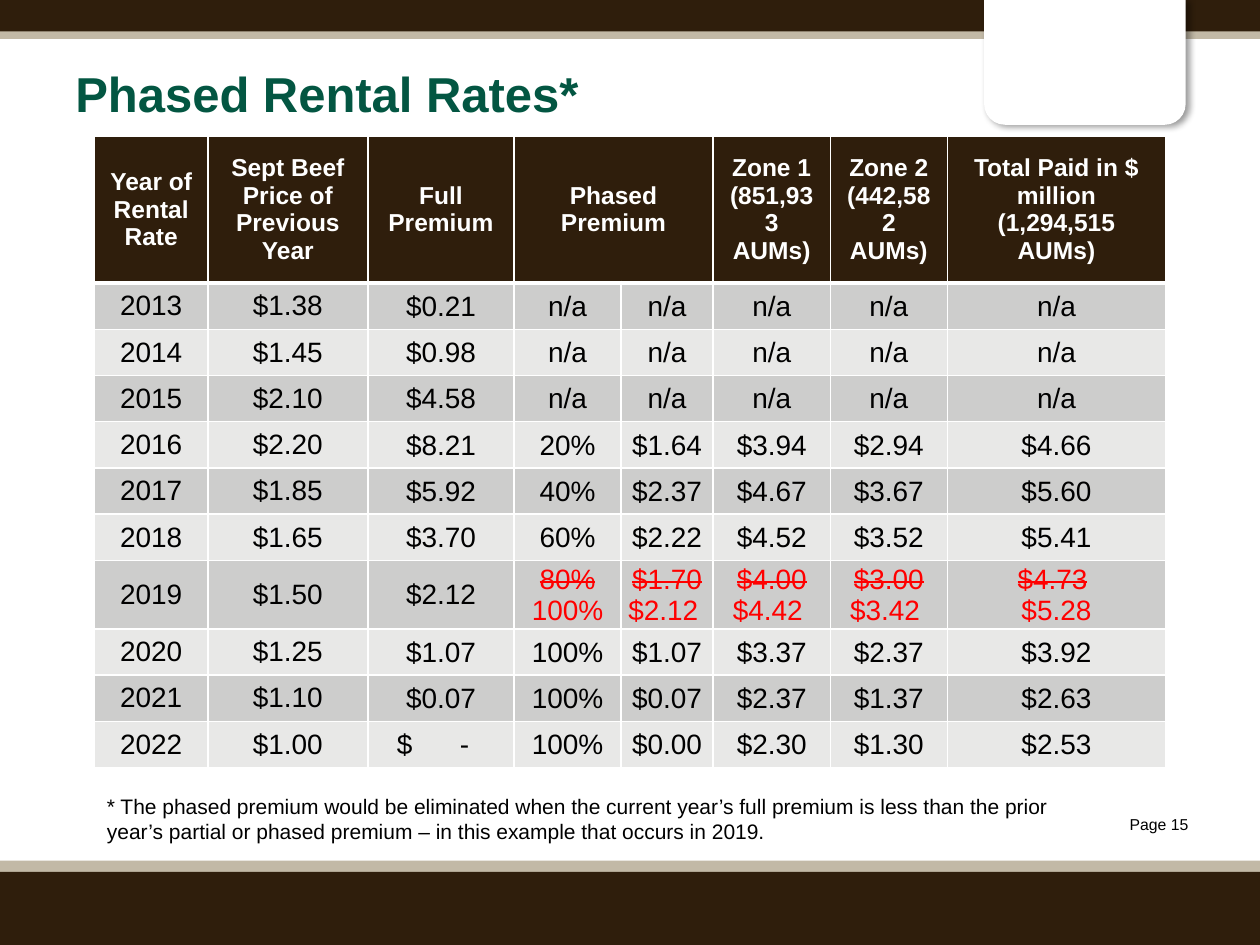
"""Builds the slide on phased rental rates with its table and footnote."""
from typing import NamedTuple

from lxml import etree
from pptx import Presentation
from pptx.dml.color import RGBColor
from pptx.enum.shapes import MSO_SHAPE
from pptx.enum.text import MSO_ANCHOR, PP_ALIGN
from pptx.oxml.ns import qn
from pptx.util import Pt

RECT, TAB = MSO_SHAPE.RECTANGLE, MSO_SHAPE.ROUND_2_SAME_RECTANGLE
LEFT, CENTER, RIGHT = PP_ALIGN.LEFT, PP_ALIGN.CENTER, PP_ALIGN.RIGHT
MIDDLE = MSO_ANCHOR.MIDDLE

BROWN = RGBColor(0x2F, 0x1E, 0x0C)
TAN = RGBColor(0xC2, 0xB9, 0xA6)
GREEN = RGBColor(0x03, 0x56, 0x42)
RED = RGBColor(0xFF, 0x00, 0x00)
BLACK = RGBColor(0x00, 0x00, 0x00)
WHITE = RGBColor(0xFF, 0xFF, 0xFF)
BANDS = RGBColor(0xCD, 0xCD, 0xCC), RGBColor(0xE8, 0xE8, 0xE7)
FONT = "Arial"


class Band(NamedTuple):
    top: float
    height: float
    color: RGBColor


class Label(NamedTuple):
    text: str
    left: float
    top: float
    width: float
    height: float
    size: float
    color: RGBColor = BLACK
    bold: bool = False
    align: PP_ALIGN = LEFT
    inset_top: float = 3.6


class Part(NamedTuple):
    text: str
    struck: bool = False


BAND_LIST = [
    Band(491.76, 12.24, TAN),
    Band(498.24, 41.76, BROWN),
    Band(16.56, 5.76, TAN),
    Band(0, 18, BROWN),
]
LABELS = [
    Label("Page 15", 608.4, 462.24, 77.76, 18, 9, align=RIGHT),
    Label("Phased Rental Rates*", 36, 30.24, 576, 57.6, 28, GREEN, True, inset_top=6),
    Label("* The phased premium would be eliminated when the current year’s full premium "
          "is less than the prior year’s partial or phased premium – in this example that "
          "occurs in 2019.", 54, 450, 558, 36, 12),
]
COL_WIDTHS = [64.8, 91.44, 83.52, 61.2, 52.56, 66.96, 66.96, 124.56]
HEADER_HEIGHT, ROW_HEIGHT, REVISED_HEIGHT = 84, 26.28, 36.5
HEADERS = ["Year of Rental Rate", "Sept Beef Price of Previous Year", "Full Premium",
           "Phased Premium", "", "Zone 1 (851,933 AUMs)", "Zone 2 (442,582 AUMs)",
           "Total Paid in $ million\n(1,294,515 AUMs)"]
NA = ["n/a"] * 5
REVISED = [
    [[Part("80%", True)], [Part("100%")]],
    [[Part("$1.70 ", True), Part("$2.12 ")]],
    [[Part("$4.00 ", True), Part("$4.42 ")]],
    [[Part("$3.00 ", True), Part("$3.42 ")]],
    [[Part("$4.73", True), Part(" ")], [Part("$5.28")]],
]
ROWS = [
    ["2013", "$1.38", "$0.21", *NA],
    ["2014", "$1.45", "$0.98", *NA],
    ["2015", "$2.10", "$4.58", *NA],
    ["2016", "$2.20", "$8.21", "20%", "$1.64", "$3.94", "$2.94", "$4.66"],
    ["2017", "$1.85", "$5.92", "40%", "$2.37", "$4.67", "$3.67", "$5.60"],
    ["2018", "$1.65", "$3.70", "60%", "$2.22", "$4.52", "$3.52", "$5.41"],
    ["2019", "$1.50", "$2.12", *REVISED],
    ["2020", "$1.25", "$1.07", "100%", "$1.07", "$3.37", "$2.37", "$3.92"],
    ["2021", "$1.10", "$0.07", "100%", "$0.07", "$2.37", "$1.37", "$2.63"],
    ["2022", "$1.00", "$\t-", "100%", "$0.00", "$2.30", "$1.30", "$2.53"],
]


def add_plain(s, kind, left: float, top: float, width: float, height: float, color: RGBColor):
    sp = s.shapes.add_shape(kind, Pt(left), Pt(top), Pt(width), Pt(height))
    sp.shadow.inherit = False
    sp.fill.solid()
    sp.fill.fore_color.rgb = color
    sp.line.fill.background()
    return sp


def add_tab(s) -> None:
    sp = add_plain(s, TAB, 562.32, 0, 115.2, 71.28, WHITE)
    sp.rotation = 180
    effects = sp._element.spPr.find(qn("a:effectLst"))
    shadow = etree.SubElement(effects, qn("a:outerShdw"), blurRad=str(Pt(4)),
                              dist=str(Pt(2.24)), dir="1590000", rotWithShape="0")
    color = etree.SubElement(shadow, qn("a:srgbClr"), val="000000")
    etree.SubElement(color, qn("a:alpha"), val="40000")


def style_run(r, size: float, color: RGBColor, bold: bool = False) -> None:
    r.font.name, r.font.size, r.font.bold = FONT, Pt(size), bold
    r.font.color.rgb = color


def style_text(tf, size: float, color: RGBColor, bold: bool, align: PP_ALIGN) -> None:
    for p in tf.paragraphs:
        p.alignment = align
        for r in p.runs:
            style_run(r, size, color, bold)


def add_label(s, label: Label) -> None:
    sp = s.shapes.add_textbox(Pt(label.left), Pt(label.top), Pt(label.width), Pt(label.height))
    tf = sp.text_frame
    tf.word_wrap = True
    tf.margin_top = Pt(label.inset_top)
    tf.text = label.text
    style_text(tf, label.size, label.color, label.bold, label.align)


def format_cell(cell, fill: RGBColor, bottom: float = 1) -> None:
    tc_pr = cell._tc.get_or_add_tcPr()
    for side, width in (("L", 1), ("R", 1), ("T", 1), ("B", bottom)):
        ln = etree.SubElement(tc_pr, qn(f"a:ln{side}"), w=str(Pt(width)))
        solid = etree.SubElement(ln, qn("a:solidFill"))
        etree.SubElement(solid, qn("a:srgbClr"), val=str(WHITE))
    cell.fill.solid()
    cell.fill.fore_color.rgb = fill
    cell.vertical_anchor = MIDDLE


def write_revised(tf, paragraphs: list[list[Part]]) -> None:
    for i, parts in enumerate(paragraphs):
        p = tf.add_paragraph() if i else tf.paragraphs[0]
        p.alignment = CENTER
        for part in parts:
            r = p.add_run()
            r.text = part.text
            style_run(r, 16, RED)
            if part.struck:
                r._r.get_or_add_rPr().set("strike", "sngStrike")


def write_value(cell, value: str) -> None:
    cell.text_frame.text = value
    align = CENTER
    if "\t" in value:
        align = LEFT
        cell.margin_left = Pt(16.6)
        p_pr = cell.text_frame.paragraphs[0]._p.get_or_add_pPr()
        tabs = etree.SubElement(p_pr, qn("a:tabLst"))
        etree.SubElement(tabs, qn("a:tab"), pos=str(Pt(36)), algn="l")
    style_text(cell.text_frame, 16, BLACK, False, align)


def add_rates(s) -> None:
    heights = [HEADER_HEIGHT] + [REVISED_HEIGHT if row[3] is REVISED[0] else ROW_HEIGHT
                                 for row in ROWS]
    table = s.shapes.add_table(len(heights), len(COL_WIDTHS), Pt(54), Pt(77.76),
                               Pt(sum(COL_WIDTHS)), Pt(sum(heights))).table
    for column, width in zip(table.columns, COL_WIDTHS):
        column.width = Pt(width)
    for row, height in zip(table.rows, heights):
        row.height = Pt(height)
    for j, header in enumerate(HEADERS):
        cell = table.cell(0, j)
        format_cell(cell, BROWN, 3)
        cell.text_frame.text = header
        style_text(cell.text_frame, 14, WHITE, True, CENTER)
    table.cell(0, 3).merge(table.cell(0, 4))
    for i, values in enumerate(ROWS):
        for j, value in enumerate(values):
            cell = table.cell(i + 1, j)
            format_cell(cell, BANDS[i % 2])
            if j > 1:
                cell.margin_left = cell.margin_right = cell.margin_top = Pt(0.72)
                cell.margin_bottom = Pt(0)
            if isinstance(value, str):
                write_value(cell, value)
            else:
                write_revised(cell.text_frame, value)


def main() -> None:
    prs = Presentation()
    prs.slide_width, prs.slide_height = Pt(720), Pt(540)
    s = prs.slides.add_slide(prs.slide_layouts[6])
    for band in BAND_LIST:
        add_plain(s, RECT, 0, band.top, 720, band.height, band.color)
    add_tab(s)
    for label in LABELS:
        add_label(s, label)
    add_rates(s)
    prs.save("out.pptx")


if __name__ == "__main__":
    main()
